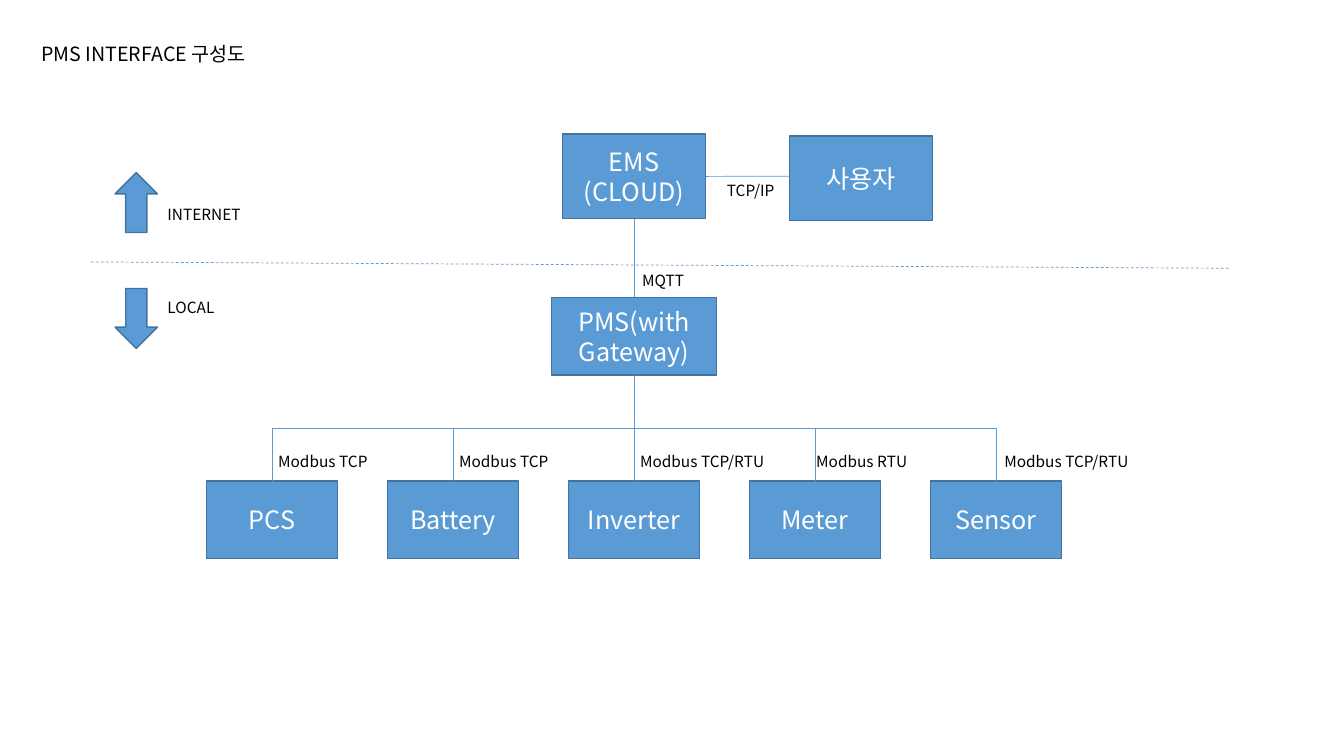
from dataclasses import dataclass

from lxml.etree import SubElement
from pptx import Presentation
from pptx.dml.color import RGBColor
from pptx.enum.dml import MSO_LINE
from pptx.enum.shapes import MSO_CONNECTOR, MSO_SHAPE
from pptx.enum.text import MSO_ANCHOR, MSO_AUTO_SIZE, PP_ALIGN
from pptx.oxml.ns import qn
from pptx.util import Cm, Pt

TOP, LEFT, BOTTOM, RIGHT = range(4)


@dataclass(frozen=True)
class Theme:
    font: str = "Noto Sans CJK KR"
    blue: RGBColor = RGBColor(0x5B, 0x9B, 0xD5)
    edge: RGBColor = RGBColor(0x43, 0x73, 0x9E)
    white: RGBColor = RGBColor(0xFF, 0xFF, 0xFF)
    black: RGBColor = RGBColor(0, 0, 0)
    title_size: int = 14
    box_size: int = 18
    label_size: int = 11
    edge_width: float = 1
    line_width: float = 0.5


class Diagram:
    def __init__(self, slide, theme):
        self.slide, self.theme = slide, theme

    def add_text(self, tf, text, size, color, align=PP_ALIGN.LEFT):
        for i, line in enumerate(text.split("\n")):
            p = tf.paragraphs[0] if i == 0 else tf.add_paragraph()
            p.alignment = align
            r = p.add_run()
            r.text = line
            r.font.color.rgb = color
            for name, value in {"size": Pt(size), "name": self.theme.font}.items():
                setattr(r.font, name, value)
            ea = SubElement(r._r.get_or_add_rPr(), qn("a:ea"))
            ea.set("typeface", self.theme.font)

    def shape(self, kind, x, y, w, h, rotation=0):
        sp = self.slide.shapes.add_shape(kind, Cm(x), Cm(y), Cm(w), Cm(h))
        sp.rotation = rotation
        sp.shadow.inherit = False
        sp.fill.solid()
        sp.fill.fore_color.rgb = self.theme.blue
        sp.line.color.rgb = self.theme.edge
        sp.line.width = Pt(self.theme.edge_width)
        return sp

    def box(self, text, x, y, w, h):
        sp = self.shape(MSO_SHAPE.RECTANGLE, x, y, w, h)
        tf = sp.text_frame
        for name, value in {"word_wrap": True, "vertical_anchor": MSO_ANCHOR.MIDDLE}.items():
            setattr(tf, name, value)
        self.add_text(tf, text, self.theme.box_size, self.theme.white, PP_ALIGN.CENTER)
        return sp

    def label(self, text, x, y, w=3, h=0.74, size=None):
        tf = self.slide.shapes.add_textbox(Cm(x), Cm(y), Cm(w), Cm(h)).text_frame
        for name, value in {"word_wrap": True, "auto_size": MSO_AUTO_SIZE.SHAPE_TO_FIT_TEXT}.items():
            setattr(tf, name, value)
        self.add_text(tf, text, size or self.theme.label_size, self.theme.black)

    def line(self, x1=0, y1=0, x2=0, y2=0, kind=MSO_CONNECTOR.STRAIGHT):
        cxn = self.slide.shapes.add_connector(kind, Cm(x1), Cm(y1), Cm(x2), Cm(y2))
        cxn.line.color.rgb = self.theme.blue
        cxn.line.width = Pt(self.theme.line_width)
        SubElement(cxn._element.spPr, qn("a:effectLst"))
        return cxn

    def branch(self, parent, child):
        """Elbow that leaves the parent's bottom and enters the child's top."""
        cxn = self.line(kind=MSO_CONNECTOR.ELBOW)
        cxn.begin_connect(parent, BOTTOM)
        cxn.end_connect(child, TOP)
        x1, y1 = parent.left + parent.width // 2, parent.top + parent.height
        x2, y2 = child.left + child.width // 2, child.top
        drop, reach = y2 - y1, abs(x2 - x1)
        # The elbow is stored lying down, so its extents are swapped about its centre.
        frame = {"left": (x1 + x2 - drop) // 2, "top": (y1 + y2 - reach) // 2,
                 "width": drop, "height": reach}
        for name, value in frame.items():
            setattr(cxn, name, value)
        to_left = x2 < x1
        xfrm = cxn._element.spPr.find(qn("a:xfrm"))
        turn = {"rot": "5400000" if to_left else "16200000",
                "flipH": "0" if to_left else "1", "flipV": "0"}
        for name, value in turn.items():
            xfrm.set(name, value)


def main():
    prs = Presentation()
    prs.slide_width, prs.slide_height = Cm(33.87), Cm(19.05)
    theme = Theme()
    d = Diagram(prs.slides.add_slide(prs.slide_layouts[6]), theme)

    d.label("PMS INTERFACE 구성도", 0.79, 0.94, 8.28, 0.86, theme.title_size)

    axis, pitch = 15.98, 4.56
    pms_w, server_w, server_h = 4.17, 3.61, 2.13
    device_w, box_h = 3.31, 1.96
    pms = d.box("PMS(with Gateway)", axis - pms_w / 2, 7.49, pms_w, box_h)
    ems = d.box("EMS\n(CLOUD)", axis - server_w / 2, 3.38, server_w, server_h)
    d.box("사용자", 19.89, 3.43, server_w, server_h)

    devices = [  # name, protocol, label offset from the branch, label width
        ("PCS", "Modbus TCP", -0.1, 3),
        ("Battery", "Modbus TCP", -0.1, 3),
        ("Inverter", "Modbus TCP/RTU", -0.1, 4.78),
        ("Meter", "Modbus RTU", -0.22, 3),
        ("Sensor", "Modbus TCP/RTU", -0.04, 3.84),
    ]
    for i, (name, protocol, offset, width) in enumerate(devices):
        center = axis + (i - 2) * pitch
        device = d.box(name, center - device_w / 2, 12.12, device_w, box_h)
        d.branch(pms, device)
        d.label(protocol, center + offset, 11.28, width)

    uplink = d.line()
    uplink.begin_connect(ems, BOTTOM)
    uplink.end_connect(pms, TOP)
    user_link = d.line(17.79, 4.44, 19.89, 4.44)
    user_link.begin_connect(ems, RIGHT)
    border = d.line(2.29, 6.6, 30.99, 6.76)
    border.line.dash_style = MSO_LINE.DASH

    for y, rotation in ((4.57, 270), (7.49, 90)):
        d.shape(MSO_SHAPE.RIGHT_ARROW, 2.68, y, 1.51, 1.07, rotation)
    for text, x, y in (("INTERNET", 3.97, 5.05), ("LOCAL", 3.97, 7.39),
                       ("MQTT", 15.93, 6.7), ("TCP/IP", 18.07, 4.45)):
        d.label(text, x, y)

    prs.save("out.pptx")


if __name__ == "__main__":
    main()
